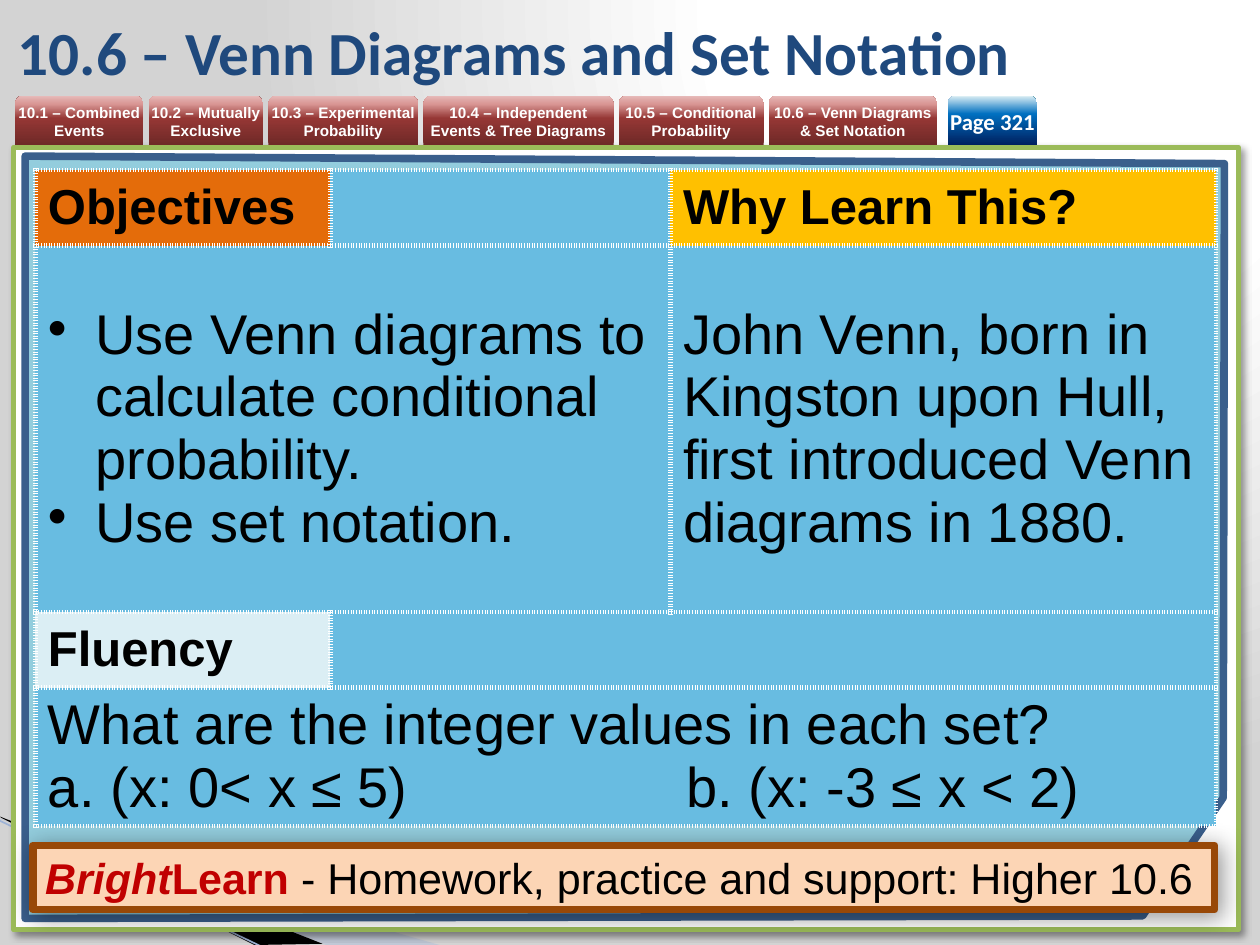
from lxml.etree import SubElement
from pptx import Presentation
from pptx.dml.color import RGBColor
from pptx.enum.shapes import MSO_CONNECTOR, MSO_SHAPE
from pptx.enum.text import MSO_ANCHOR, PP_ALIGN
from pptx.oxml.ns import qn
from pptx.util import Pt

COLOURS = {
    "white": "FFFFFF", "black": "000000", "navy": "1F497D", "grey": "D3D3D3",
    "pale": "A7B9DB", "thread": "9EB3D6", "green": "9BBB59", "aqua": "93CDDD",
    "frame": "3A5F8C", "sky": "68BCE1", "orange": "E46C0A", "gold": "FFC000",
    "ice": "DBEEF4", "peach": "FCD5B5", "brown": "984807", "red": "C00000",
}
TAB_STOPS = [(0, "6F2927"), (54, "953735"), (83, "D99694"), (100, "E6B9B8")]
PAGE_STOPS = [(0, "002060"), (63, "0070C0"), (100, "DBEEF4")]
BACK_STOPS = [(0, "FFFFFF"), (40, "FFFFFF"), (100, "D3D3D3")]


def colour(name):
    return RGBColor.from_string(COLOURS[name])


def points(*lengths):
    return [Pt(length) for length in lengths]


def add(parent, tag, **attributes):
    return SubElement(parent, qn(tag), {key: str(value) for key, value in attributes.items()})


def set_font(font, name, size, tint, bold=False):
    font.name, font.size, font.bold = name, Pt(size), bold
    font.color.rgb = colour(tint)


def set_gradient(fill, element, stops):
    fill.gradient()
    stop_list = element.find(".//" + qn("a:gsLst"))
    stop_list.clear()
    for position, value in stops:
        stop = add(stop_list, "a:gs", pos=position * 1000)
        add(stop, "a:srgbClr", val=value)
    return stop_list.getparent()


def set_solid(shape, fill, line=None, width=0):
    shape.shadow.inherit = False
    shape.fill.solid()
    shape.fill.fore_color.rgb = colour(fill)
    if line:
        shape.line.color.rgb = colour(line)
        shape.line.width = Pt(width)
    else:
        shape.line.fill.background()


def add_shadow(shape, blur, distance):
    effects = shape._element.spPr.find(qn("a:effectLst"))
    shadow = add(effects, "a:outerShdw", blurRad=Pt(blur), dist=Pt(distance),
                 dir=45 * 60000, algn="tl", rotWithShape=0)
    tint = add(shadow, "a:srgbClr", val=COLOURS["black"])
    add(tint, "a:alpha", val=40000)


def add_outline(page, corners):
    start, *rest = [points(*corner) for corner in corners]
    builder = page.shapes.build_freeform(*start)
    builder.add_line_segments(rest, close=True)
    return builder.convert_to_shape()


def draw_background(page, width, height):
    gradient = set_gradient(page.background.fill, page.background._cSld, BACK_STOPS)
    gradient.remove(gradient.find(qn("a:lin")))
    radial = add(gradient, "a:path", path="circle")
    add(radial, "a:fillToRect", l=65000, t=0, r=0, b=98000)
    # Swooshes in the bottom left corner
    pale = add_outline(page, [(-0.7, 468), (251.3, height), (186.5, height), (-0.7, 467.3)])
    set_solid(pale, "pale")
    add(pale._element.spPr.find(".//" + qn("a:srgbClr")), "a:alpha", val=40000)
    dark = add_outline(page, [(0, 466.6), (184.3, height - 0.7), (145.4, height), (0.7, 467.3)])
    set_solid(dark, "black")
    thread = page.shapes.add_connector(
        MSO_CONNECTOR.STRAIGHT, *points(-0.7, 468.7, 150.5, height + 1.4))
    thread.line.color.rgb = colour("thread")
    thread.line.width = Pt(0.95)
    add(thread._element.spPr, "a:effectLst")


def draw_panel(page, left, top, width, height):
    card = page.shapes.add_shape(MSO_SHAPE.RECTANGLE, *points(left, top, width, height))
    set_solid(card, "white", "green", 3)
    add_shadow(card, 4, 3)
    # Slanted sheet with a cut corner
    inner_left, inner_top = left + 6.5, top + 5
    right, bottom = left + width - 8, top + height - 6.5
    sheet = add_outline(page, [
        (inner_left, inner_top), (right, inner_top + 4.3), (right - 0.7, bottom - 69),
        (right - 46.8, bottom - 1.4), (inner_left, bottom)])
    set_solid(sheet, "aqua", "frame", 4.33)


def draw_tab(page, left, top, width, height, text, stops):
    tab = page.shapes.add_shape(
        MSO_SHAPE.ROUND_2_SAME_RECTANGLE, *points(left, top, width, height))
    tab.shadow.inherit = False
    set_gradient(tab.fill, tab._element.spPr, stops)
    tab.fill.gradient_angle = 90
    tab.line.fill.background()
    frame = tab.text_frame
    frame.margin_left = frame.margin_right = frame.margin_top = frame.margin_bottom = 0
    frame.vertical_anchor = MSO_ANCHOR.MIDDLE
    frame.text = text
    para = frame.paragraphs[0]
    para.alignment = PP_ALIGN.CENTER
    return para


def draw_tabs(page, left, top, height):
    tabs = [("10.1 – Combined Events", 73.4), ("10.2 – Mutually Exclusive", 65.5),
            ("10.3 – Experimental Probability", 85.7),
            ("10.4 – Independent Events & Tree Diagrams", 108.7),
            ("10.5 – Conditional Probability", 82.8),
            ("10.6 – Venn Diagrams & Set Notation", 96.5)]
    for text, width in tabs:
        para = draw_tab(page, left, top, width, height, text, TAB_STOPS)
        para.line_spacing = Pt(10)
        set_font(para.font, "Arial", 8.7, "white", True)
        left += width + 2.9
    # Page reference
    para = draw_tab(page, left + 2.9, top, 51.1, height, "Page 321", PAGE_STOPS)
    set_font(para.font, "Calibri", 13, "white", True)


def draw_title(page, left, top, width, height):
    title = page.shapes.title
    title.left, title.top, title.width, title.height = points(left, top, width, height)
    title.text_frame.text = "10.6 – Venn Diagrams and Set Notation"
    title.text_frame.vertical_anchor = MSO_ANCHOR.MIDDLE
    para = title.text_frame.paragraphs[0]
    para.alignment = PP_ALIGN.LEFT
    set_font(para.font, "Calibri", 35, "navy", True)


def set_bullet(para, indent, tag, **attributes):
    properties = para._p.get_or_add_pPr()
    properties.set("marL", str(Pt(indent)))
    properties.set("indent", str(-Pt(indent)))
    add(properties, tag, **attributes)
    return properties


def style_cell(cell, fill):
    cell.fill.solid()
    cell.fill.fore_color.rgb = colour(fill)
    cell.vertical_anchor = MSO_ANCHOR.MIDDLE
    properties = cell._tc.get_or_add_tcPr()
    for position, side in enumerate(("a:lnL", "a:lnR", "a:lnT", "a:lnB")):
        border = add(properties, side, w=Pt(3))
        add(add(border, "a:solidFill"), "a:srgbClr", val=COLOURS["white"])
        add(border, "a:prstDash", val="sysDot")
        properties.insert(position, border)


def draw_table(page, left, top, columns, rows):
    box = page.shapes.add_table(len(rows), len(columns),
                                *points(left, top, sum(columns), sum(rows)))
    table = box.table
    table.first_row = table.horz_banding = False
    for column, width in zip(table.columns, columns):
        column.width = Pt(width)
    for row, height in zip(table.rows, rows):
        row.height = Pt(height)
    for first, last in [((1, 0), (1, 1)), ((2, 1), (2, 2)), ((3, 0), (3, 2))]:
        table.cell(*first).merge(table.cell(*last))
    headings = {(0, 0): ("Objectives", "orange"), (0, 2): ("Why Learn This?", "gold"),
                (2, 0): ("Fluency", "ice")}
    bodies = {
        (1, 0): "Use Venn diagrams to calculate conditional probability.\nUse set notation.",
        (1, 2): "John Venn, born in Kingston upon Hull, first introduced Venn diagrams in 1880.",
        (3, 0): "What are the integer values in each set?\n(x: 0< x ≤ 5)\tb. (x: -3 ≤ x < 2)",
    }
    for row in range(len(rows)):
        for column in range(len(columns)):
            place = row, column
            cell = table.cell(row, column)
            text, fill = headings.get(place, (bodies.get(place, ""), "sky"))
            style_cell(cell, fill)
            cell.text_frame.text = text
            for para in cell.text_frame.paragraphs:
                if place == (1, 0):
                    set_bullet(para, 27, "a:buChar", char="•")
                elif "\t" in para.text:
                    properties = set_bullet(para, 36, "a:buAutoNum", type="alphaLcPeriod")
                    add(add(properties, "a:tabLst"), "a:tab", pos=Pt(365), algn="l")
                bold = place in headings
                set_font(para.font, "Arial", 28 if bold else 32, "black", bold)


def draw_banner(page, left, top, width, height):
    banner = page.shapes.add_shape(MSO_SHAPE.RECTANGLE, *points(left, top, width, height))
    set_solid(banner, "peach", "brown", 4.33)
    add_shadow(banner, 13, 3)
    banner.text_frame.vertical_anchor = MSO_ANCHOR.MIDDLE
    para = banner.text_frame.paragraphs[0]
    para.alignment = PP_ALIGN.LEFT
    for text, tint, bold, italic in [
            ("Bright", "red", True, True), ("Learn ", "red", True, False),
            ("- Homework, practice and support: Higher 10.6", "black", False, False)]:
        span = para.add_run()
        span.text = text
        set_font(span.font, "Arial", 24.6, tint, bold)
        span.font.italic = italic


def main():
    deck = Presentation()
    deck.slide_width, deck.slide_height = points(720, 540)
    page = deck.slides.add_slide(deck.slide_layouts[5])
    draw_background(page, 720, 540)
    draw_panel(page, 7.9, 84.2, 699.8, 447.1)
    draw_tabs(page, 8.6, 54.7, 28.1)
    draw_title(page, 2.9, 3.6, 595.4, 51.1)
    draw_table(page, 20.2, 97.2, [168.5, 194.4, 311.8], [42.5, 209.5, 38.5, 79.2])
    draw_banner(page, 18.7, 483.1, 675.4, 36.7)
    deck.save("out.pptx")


if __name__ == "__main__":
    main()
